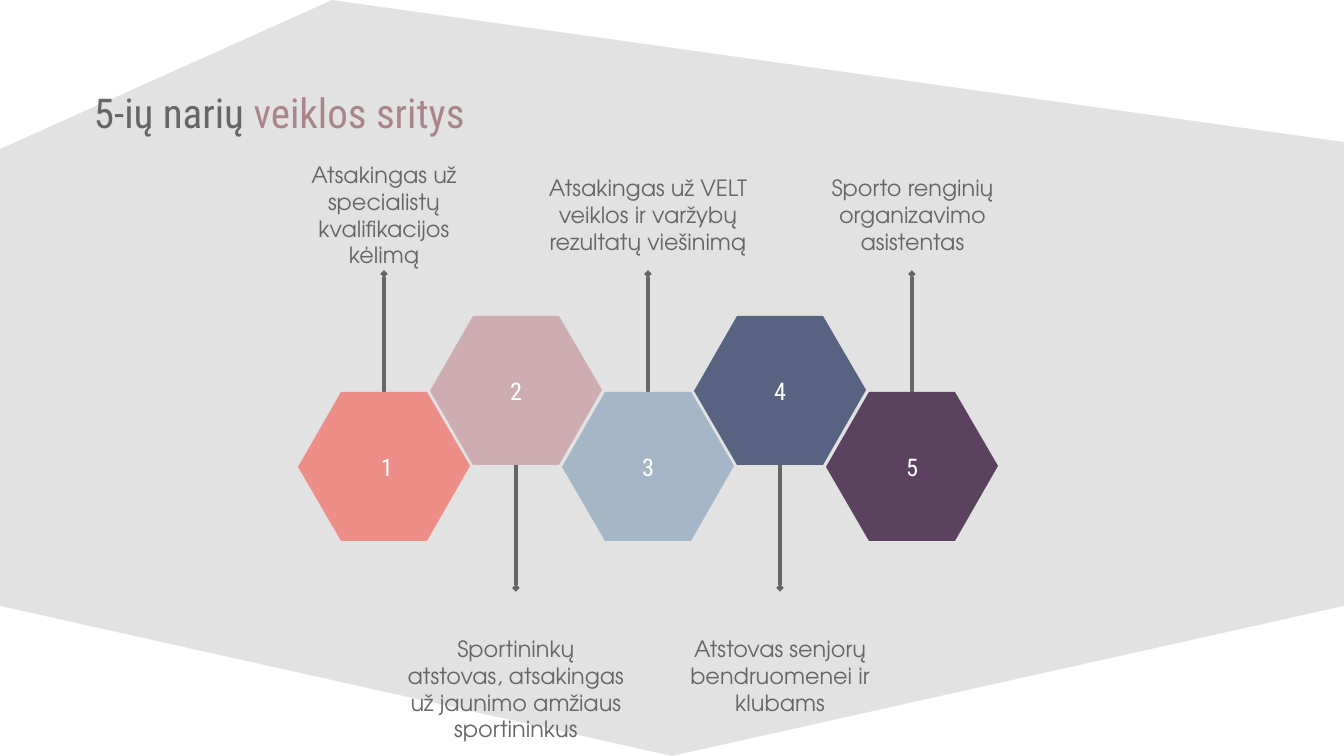
import lxml.etree
import pptx
import pptx.dml.color
import pptx.enum.shapes
import pptx.enum.text
import pptx.oxml.ns
import pptx.util

RGB = pptx.dml.color.RGBColor
ALIGN = pptx.enum.text.PP_ALIGN
ANCHOR = pptx.enum.text.MSO_ANCHOR
qn = pptx.oxml.ns.qn

GREY = RGB(0xE2, 0xE2, 0xE2)
WHITE = RGB(0xFF, 0xFF, 0xFF)
INK = RGB(0x66, 0x66, 0x66)
MAUVE = RGB(0xAA, 0x86, 0x8C)
CORAL = RGB(0xEE, 0x8E, 0x88)
ROSE = RGB(0xCD, 0xAD, 0xB1)
MIST = RGB(0xA5, 0xB7, 0xC6)
NAVY = RGB(0x58, 0x63, 0x81)
PLUM = RGB(0x5B, 0x43, 0x5F)

EMU_PER_PX = 914400 / 134.4
WIDTH, HEIGHT = 1344, 756
HEX_WIDTH, HEX_PITCH, HEX_RISE = 172, 132, 76
HEX_OUTLINE = [(129, 0), (43, 0), (0, 75), (43, 149), (129, 149), (172, 74)]
CONDENSED, ADVENTOR = "Roboto Condensed", "TeX Gyre Adventor"

AREAS = [
    (" 1", CORAL, "Atsakingas už specialistų kvalifikacijos kėlimą", 160, 184),
    ("2", ROSE, "Sportininkų atstovas, atsakingas už jaunimo amžiaus sportininkus", 634, 218),
    ("3", MIST, "Atsakingas už VELT veiklos ir varžybų rezultatų viešinimą", 173, 226),
    ("4", NAVY, "Atstovas senjorų bendruomenei ir klubams", 634, 226),
    ("5", PLUM, "Sporto renginių organizavimo asistentas", 173, 179),
]


def px(length):
    return pptx.util.Emu(round(length * EMU_PER_PX))


def apply(target, formats):
    for attribute, value in formats.items():
        setattr(target, attribute, value)


def style_frame(frame, anchor, top_margin):
    apply(frame, {
        "margin_left": 0, "margin_right": 0, "margin_bottom": 0,
        "margin_top": px(top_margin), "word_wrap": True,
        "auto_size": pptx.enum.text.MSO_AUTO_SIZE.NONE, "vertical_anchor": anchor,
    })


def add_run(paragraph, words, size, font_name, color):
    run = paragraph.add_run()
    run.text = words
    apply(run.font, {"size": pptx.util.Pt(size), "name": font_name, "bold": False})
    run.font.color.rgb = color


def add_label(slide, box, words, size, font_name, color):
    label = slide.shapes.add_textbox(*map(px, box)).text_frame
    style_frame(label, ANCHOR.TOP, 1)
    label.paragraphs[0].alignment = ALIGN.CENTER
    add_run(label.paragraphs[0], words, size, font_name, color)


def add_polygon(slide, left, top, outline, color):
    points = [(px(left + x), px(top + y)) for x, y in outline]
    builder = slide.shapes.build_freeform(*points[0], scale=1.0)
    builder.add_line_segments(points[1:], close=True)
    polygon = builder.convert_to_shape()
    polygon.shadow.inherit = False
    polygon.fill.solid()
    polygon.fill.fore_color.rgb = color
    polygon.line.fill.background()


def add_pointer(slide, x, start, end):
    pointer = slide.shapes.add_connector(
        pptx.enum.shapes.MSO_CONNECTOR.STRAIGHT, px(x), px(start), px(x), px(end))
    pointer.line.width = pptx.util.Pt(2)
    pointer.line.color.rgb = INK
    properties = pointer.element.spPr
    lxml.etree.SubElement(
        properties.find(qn("a:ln")), qn("a:tailEnd"), type="diamond", w="sm", len="sm")
    lxml.etree.SubElement(properties, qn("a:effectLst"))


def build_backdrop(slide, left, top, width, height):
    shoulder, peak, upper_right, lower = 332, 149, 142, 606
    add_polygon(slide, left, top, [(0, 0), (width, 0), (width, height), (0, height)], GREY)
    corners = [
        [(width, lower), (width // 2, height), (width, height)],
        [(0, 0), (0, peak), (shoulder, 0)],
        [(width, 0), (shoulder, 0), (width, upper_right)],
        [(0, lower), (0, height), (width // 2, height)],
    ]
    for corner in corners:
        add_polygon(slide, left, top, corner, WHITE)


def build_title(slide, left, top, width, height):
    title = slide.shapes.title
    title.element.getparent().append(title.element)
    apply(title, {"left": px(left), "top": px(top), "width": px(width), "height": px(height)})
    style_frame(title.text_frame, ANCHOR.MIDDLE, 0)
    heading = title.text_frame.paragraphs[0]
    heading.alignment = ALIGN.LEFT
    add_run(heading, "5-ių narių ", 22, CONDENSED, INK)
    add_run(heading, "veiklos sritys", 22, CONDENSED, MAUVE)


def build_area(slide, left, top, raised, area):
    number, color, duty, duty_top, duty_width = area
    center = left + HEX_WIDTH // 2
    start, end = (top + 107, top + 272) if raised else (top + 47, top - 118)
    add_pointer(slide, center, start, end)
    add_polygon(slide, left, top, HEX_OUTLINE, color)
    add_label(slide, (center - 37, top + 59, 74, 26), number, 13, CONDENSED, WHITE)
    add_label(slide, (center - duty_width // 2, duty_top, duty_width, 38),
              duty, 12, ADVENTOR, INK)


def build_chain(slide, left, top):
    for index, area in enumerate(AREAS):
        raised = index % 2 == 1
        build_area(slide, left + index * HEX_PITCH,
                   top if raised else top + HEX_RISE, raised, area)


def main():
    deck = pptx.Presentation()
    apply(deck, {"slide_width": px(WIDTH), "slide_height": px(HEIGHT)})
    slide = deck.slides.add_slide(deck.slide_layouts.get_by_name("Title Only"))
    build_backdrop(slide, 0, 0, WIDTH, HEIGHT)
    build_title(slide, 94, 87, 1146, 51)
    build_chain(slide, 298, 316)
    deck.save("out.pptx")


if __name__ == "__main__":
    main()
